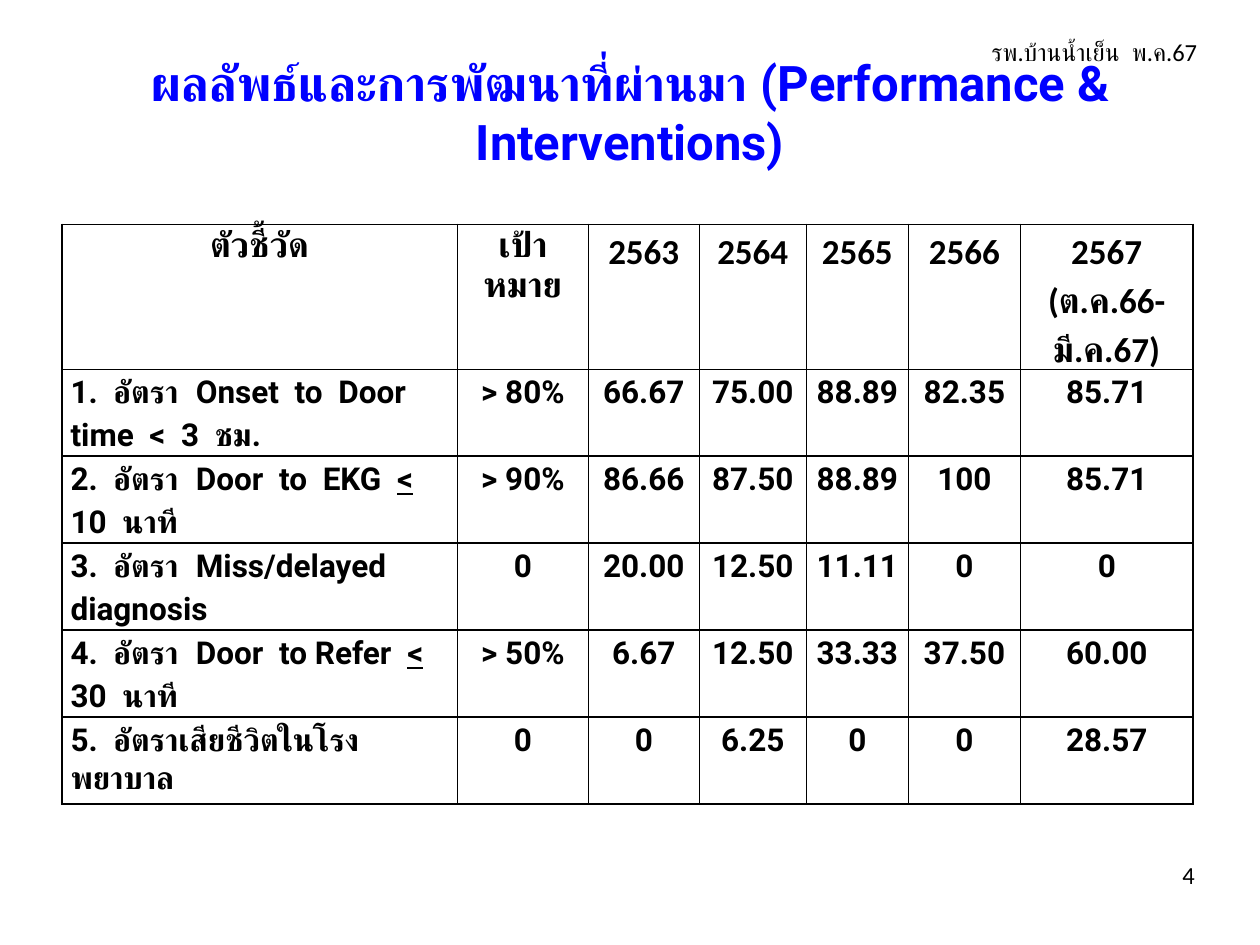
from lxml import etree
from pptx import Presentation
from pptx import util as u
from pptx.dml.color import RGBColor
from pptx.enum import text
from pptx.oxml.ns import qn

COLUMNS, ROWS = 100, 75
LEFT, CENTER, RIGHT = text.PP_ALIGN.LEFT, text.PP_ALIGN.CENTER, text.PP_ALIGN.RIGHT

TITLE = "ผลลัพธ์และการพัฒนาที่ผ่านมา (Performance & Interventions)"
HOSPITAL = "รพ.บ้านน้ำเย็น  พ.ค.67"
COLUMN_WIDTHS = [31.4, 10.4, 8.8, 8.5, 8.1, 8.9, 13.7]
ROW_HEIGHTS = [8.6, 4.9, 4.7, 4.7, 4.7, 4.7]
INDICATORS = [
    ["ตัวชี้วัด", "เป้าหมาย", "2563", "2564", "2565", "2566", "2567\n(ต.ค.66-มี.ค.67)"],
    ["1.  อัตรา  Onset  to  Door  time  <  3  ชม.", "> 80%", "66.67", "75.00", "88.89", "82.35", "85.71"],
    ["2.  อัตรา  Door  to  EKG  _<_  10  นาที", "> 90%", "86.66", "87.50", "88.89", "100", "85.71"],
    ["3.  อัตรา  Miss/delayed  diagnosis", "0", "20.00", "12.50", "11.11", "0", "0"],
    ["4.  อัตรา  Door  to Refer  _<_  30  นาที", "> 50%", "6.67", "12.50", "33.33", "37.50", "60.00"],
    ["5.  อัตราเสียชีวิตในโรงพยาบาล", "0", "0", "6.25", "0", "0", "28.57"],
]


def color(value):
    return RGBColor.from_string(value)


def apply(target, values):
    for name, value in values.items():
        setattr(target, name, value)


class Report:
    STYLES = {
        "title": ({"name": "Roboto", "size": u.Pt(28), "bold": True}, "0000FF"),
        "heading": ({"name": "Calibri", "size": u.Pt(20), "bold": True}, "000000"),
        "body": ({"name": "Roboto", "size": u.Pt(18), "bold": True}, "000000"),
        "note": ({"name": "Calibri", "size": u.Pt(14)}, "000000"),
    }
    MARGINS = {
        "margin_left": u.Inches(0.07),
        "margin_right": u.Inches(0.07),
        "margin_top": 0,
        "margin_bottom": 0,
    }

    def __init__(self):
        self.deck = Presentation()
        apply(self.deck, {"slide_width": u.Inches(10), "slide_height": u.Inches(7.5)})
        self.page = self.deck.slides.add_slide(self.deck.slide_layouts[6])

    def across(self, columns):
        return round(self.deck.slide_width * columns / COLUMNS)

    def down(self, rows):
        return round(self.deck.slide_height * rows / ROWS)

    def place(self, left, top, width, height):
        return self.across(left), self.down(top), self.across(width), self.down(height)

    def fill_text(self, frame, content, style, alignment, spacing):
        values, tint = self.STYLES[style]
        for index, line in enumerate(content.split("\n")):
            para = frame.add_paragraph() if index else frame.paragraphs[0]
            apply(para, {"alignment": alignment, "line_spacing": spacing})
            for part, words in enumerate(line.split("_")):
                span = para.add_run()
                span.text = words
                apply(span.font, values)
                span.font.color.rgb = color(tint)
                if part % 2:
                    span.font.underline = True

    def label(self, place, content, style, alignment, spacing=1.15, **options):
        box = self.page.shapes.add_textbox(*self.place(*place))
        apply(box.text_frame, {"word_wrap": True, **options})
        self.fill_text(box.text_frame, content, style, alignment, spacing)

    def outline(self, cell, tint="000000", weight=1):
        properties = cell._tc.get_or_add_tcPr()
        for side in ("a:lnL", "a:lnR", "a:lnT", "a:lnB"):
            line = etree.SubElement(properties, qn(side), w=str(u.Pt(weight)))
            fill = etree.SubElement(line, qn("a:solidFill"))
            etree.SubElement(fill, qn("a:srgbClr"), val=tint)

    def table(self, left, top, widths, heights, content):
        place = self.place(left, top, sum(widths), sum(heights))
        table = self.page.shapes.add_table(len(heights), len(widths), *place).table
        apply(table, {"first_row": False, "horz_banding": False})
        for column, width in zip(table.columns, widths):
            column.width = self.across(width)
        for row, height in zip(table.rows, heights):
            row.height = self.down(height)
        for row, values in enumerate(content):
            for column, value in enumerate(values):
                cell = table.cell(row, column)
                apply(cell, self.MARGINS)
                self.outline(cell)
                cell.fill.background()
                style = "body" if row else "heading"
                alignment = LEFT if row and not column else CENTER
                self.fill_text(cell.text_frame, value, style, alignment, 1.15)


def main():
    report = Report()
    report.label(
        (0, 6, 100, 5.7), TITLE, "title", CENTER, 1.0,
        vertical_anchor=text.MSO_ANCHOR.MIDDLE,
        auto_size=text.MSO_AUTO_SIZE.SHAPE_TO_FIT_TEXT,
    )
    report.table(4.9, 17.8, COLUMN_WIDTHS, ROW_HEIGHTS, INDICATORS)
    report.label((77.6, 2.1, 18.4, 4.7), HOSPITAL, "note", RIGHT)
    report.label((89.4, 67.4, 6.4, 4.7), "4", "note", RIGHT)
    report.deck.save("out.pptx")


if __name__ == "__main__":
    main()
